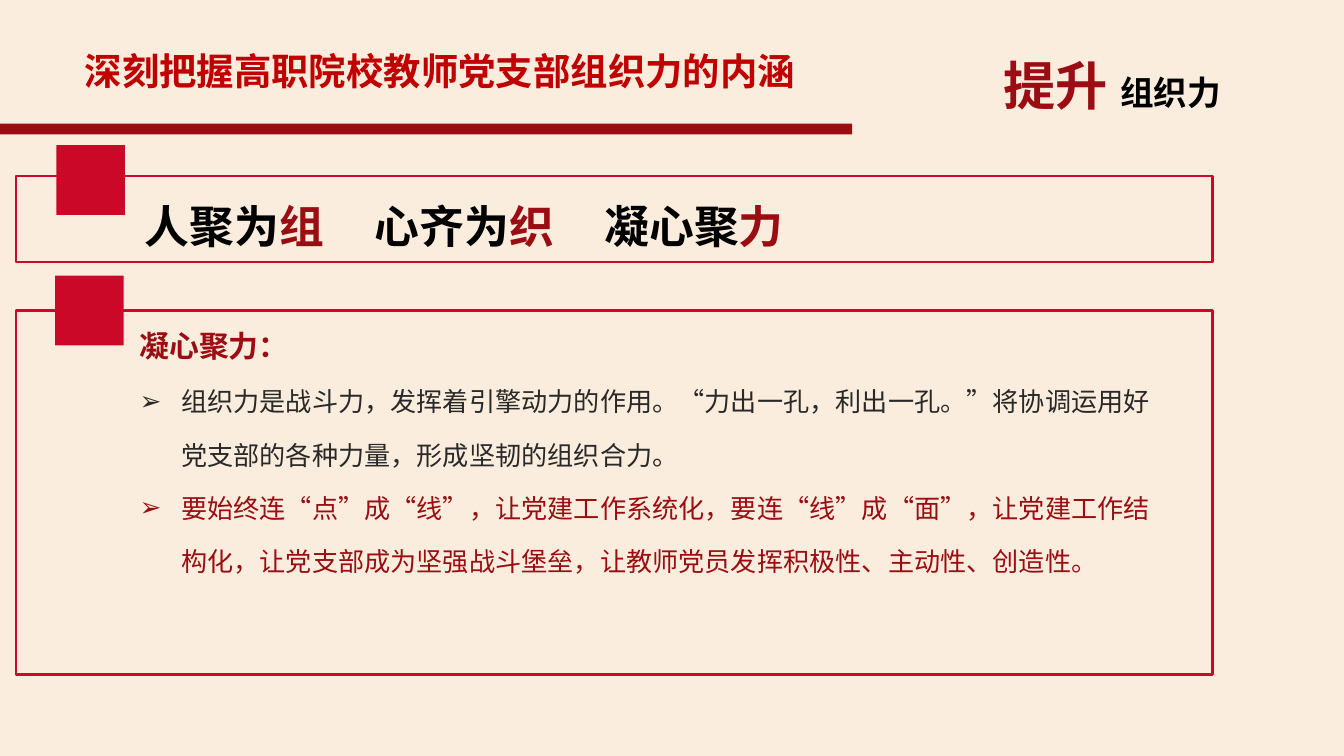
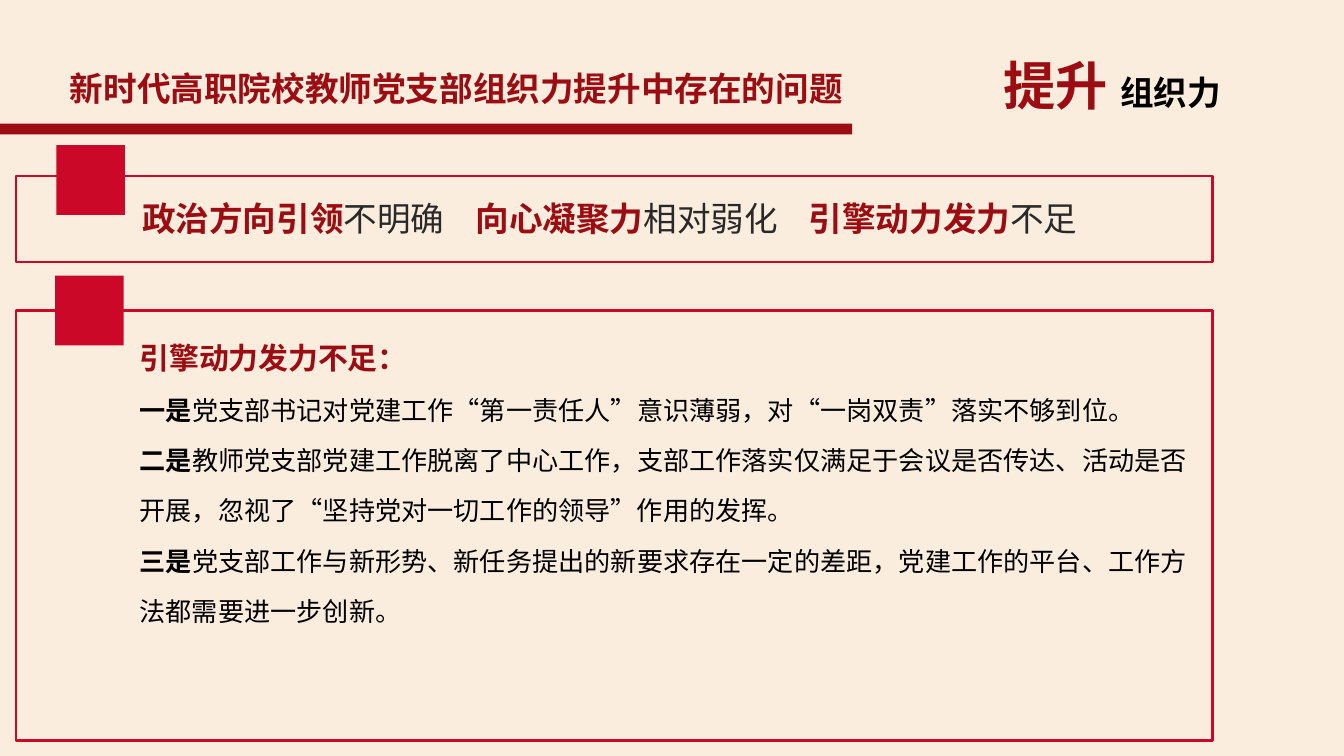
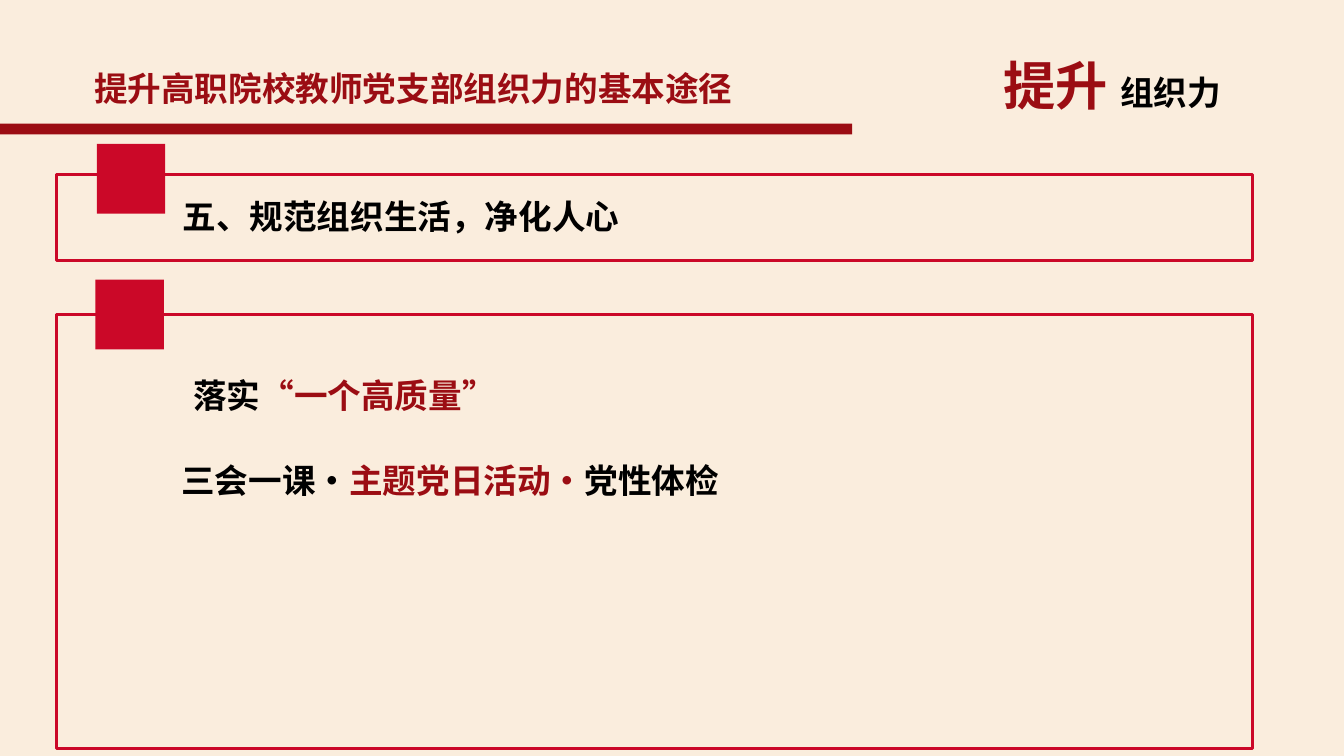
from lxml.etree import SubElement
from pptx import Presentation
from pptx.dml.color import RGBColor
from pptx.enum.lang import MSO_LANGUAGE_ID
from pptx.enum.shapes import MSO_SHAPE
from pptx.enum.text import MSO_ANCHOR, MSO_AUTO_SIZE, PP_ALIGN
from pptx.oxml.ns import qn
from pptx.util import Inches, Pt

COLORS = {
    "paper": "FAEDDD",
    "dark_red": "9B0D13",
    "title_red": "C00000",
    "red": "CB0828",
    "ink": "292929",
    "black": "000000",
}
FONT, TITLE_FONT = "Noto Sans CJK SC", "Arial Narrow"
PANEL_W, HEADLINE_H = 8.9, 0.64
MARKER_W, MARKER_H = 0.51, 0.52


def rgb(name):
    return RGBColor.from_string(COLORS[name])


def add_run(p, text, size=18, color="black", bold=False, font=FONT):
    r = p.add_run()
    r.text = text
    r.font.size, r.font.bold, r.font.name = Pt(size), bold, font
    r.font.color.rgb = rgb(color)
    r.font.language_id = MSO_LANGUAGE_ID.SIMPLIFIED_CHINESE
    SubElement(r.font._element, qn("a:ea"), typeface=FONT)


def add_bullet(p, char, indent):
    pPr = p._p.get_or_add_pPr()
    pPr.set("marL", str(Inches(indent)))
    pPr.set("indent", str(-Inches(indent)))
    SubElement(pPr, qn("a:buFont"), typeface="Arial")
    SubElement(pPr, qn("a:buChar"), char=char)


def add_tabs(p, step, count=2):
    tabs = SubElement(p._p.get_or_add_pPr(), qn("a:tabLst"))
    for i in range(1, count + 1):
        SubElement(tabs, qn("a:tab"), pos=str(Inches(step * i)), algn="l")


def write(tf, *paras, spacing=1.0, tab_step=None, **fmt):
    """Each paragraph is a dict with runs [(text, format)] and its own settings."""
    tf.word_wrap = True
    for i, para in enumerate(paras):
        p = tf.paragraphs[0] if i == 0 else tf.add_paragraph()
        p.alignment = PP_ALIGN.LEFT
        p.line_spacing = para.get("spacing", spacing)
        p.space_before = Pt(0)
        if "bullet" in para:
            add_bullet(p, para["bullet"], 0.31)
        if "indent" in para:
            p._p.get_or_add_pPr().set("marL", str(Inches(para["indent"])))
        if tab_step:
            add_tabs(p, tab_step)
        for text, run_fmt in para["runs"]:
            add_run(p, text, **{**fmt, **run_fmt})


def para(*runs, **settings):
    return {"runs": runs, **settings}


def add_box(shapes, x, y, w, h, fill=None, line=None):
    sp = shapes.add_shape(MSO_SHAPE.RECTANGLE, Inches(x), Inches(y), Inches(w), Inches(h))
    sp.shadow.inherit = False
    if fill:
        sp.fill.solid()
        sp.fill.fore_color.rgb = rgb(fill)
    else:
        sp.fill.background()
    if line:
        sp.line.color.rgb = rgb(line)
        sp.line.width = Pt(1.5)
    else:
        sp.line.fill.background()
    return sp


def add_text(shapes, x, y, w, h, *paras, **fmt):
    sp = shapes.add_textbox(Inches(x), Inches(y), Inches(w), Inches(h))
    write(sp.text_frame, *paras, **fmt)
    return sp


def dress_layout(layout, s):
    """Give the layout its background, title band and corner label."""
    layout.background.fill.solid()
    layout.background.fill.fore_color.rgb = rgb("paper")
    for ph in list(layout.placeholders)[1:]:
        ph.element.getparent().remove(ph.element)
    label = add_text(s.shapes, 7.37, 0.35, 2.61, 0.57, para(
        ("提升 ", {"size": 28, "color": "dark_red"}), ("组织力", {})), bold=True)
    band = add_box(s.shapes, 0, 0.92, 6.34, 0.08, fill="dark_red")
    for sp in (label, band):
        layout.shapes.element.append(sp.element)


def add_title(s, text, x, y, w, size=18, color="dark_red"):
    sp = s.shapes.title
    sp.left, sp.top, sp.width, sp.height = map(Inches, (x, y, w, 0.63))
    tf = sp.text_frame
    tf.auto_size = MSO_AUTO_SIZE.NONE
    tf.vertical_anchor = MSO_ANCHOR.MIDDLE
    write(tf, para((text, {})), size=size, color=color, bold=True, font=TITLE_FONT)


def add_panel(s, x, y, h, marker, text_box, *paras, **fmt):
    """Outlined panel; marker and text_box are offsets from its top left corner."""
    shapes = s.shapes.add_group_shape().shapes
    add_box(shapes, x, y, PANEL_W, h, line="red")
    add_box(shapes, x + marker[0], y + marker[1], MARKER_W, MARKER_H, fill="red")
    dx, dy, w, text_h = text_box
    add_text(shapes, x + dx, y + dy, w, text_h, *paras, **fmt)


def add_headline(s, x, y, text_box, *runs, **fmt):
    add_panel(s, x, y, HEADLINE_H, (0.3, -0.23), text_box, para(*runs), spacing=1.3, **fmt)


def add_body(s, x, y, h, text_box, *paras, **fmt):
    add_panel(s, x, y, h, (0.29, -0.26), text_box, *paras, **fmt)


RED = {"color": "dark_red"}
RED_BOLD = {"color": "dark_red", "bold": True}
BOLD = {"bold": True}
HEADING = {"size": 16, **RED_BOLD}


def meaning_slide(s):
    add_title(s, "深刻把握高职院校教师党支部组织力的内涵", 0.53, 0.21, 5.53,
              size=20, color="title_red")
    add_headline(s, 0.12, 1.31, (0.86, 0, 6.46, 1.15),
                 ("人聚为", {}), ("组\t", RED), ("心齐为", {}), ("织\t", RED),
                 ("凝心聚", {}), ("力", RED), size=24, bold=True, tab_step=1.71)
    add_body(
        s, 0.12, 2.31, 2.71, (0.82, 0, 7.83, 2.05),
        para(("凝心聚力：", HEADING), spacing=1.3),
        para(("组织力是战斗力，发挥着引擎动力的作用。“力出一孔，利出一孔。”将协调运用好"
              "党支部的各种力量，形成坚韧的组织合力。", {"color": "ink"}), bullet="➢"),
        para(("要始终连“点”成“线”，让党建工作系统化，要连“线”成“面”，让党建工作结构化，"
              "让党支部成为坚强战斗堡垒，让教师党员发挥积极性、主动性、创造性。", RED), bullet="➢"),
        spacing=1.7, size=14)


def problems_slide(s):
    add_title(s, "新时代高职院校教师党支部组织力提升中存在的问题", 0.42, 0.34, 6.15)
    add_headline(s, 0.12, 1.31, (0.84, 0.02, 7.67, 0.49),
                 ("政治方向引领", RED_BOLD), ("不明确\t", {}),
                 ("向心凝聚力", RED_BOLD), ("相对弱化\t", {}),
                 ("引擎动力发力", RED_BOLD), ("不足", {}), color="ink", tab_step=2.48)
    problems = [
        ("一是", "党支部书记对党建工作“第一责任人”意识薄弱，对“一岗双责”落实不够到位。"),
        ("二是", "教师党支部党建工作脱离了中心工作，支部工作落实仅满足于会议是否传达、"
                 "活动是否开展，忽视了“坚持党对一切工作的领导”作用的发挥。"),
        ("三是", "党支部工作与新形势、新任务提出的新要求存在一定的差距，党建工作的平台、"
                 "工作方法都需要进一步创新。"),
    ]
    add_body(s, 0.12, 2.31, 3.2, (0.82, 0.01, 8.08, 2.41),
             para(("引擎动力发力不足：", HEADING)),
             *[para((lead, BOLD), (text, {})) for lead, text in problems],
             spacing=1.6, size=14)


def approach_slide(s):
    add_title(s, "提升高职院校教师党支部组织力的基本途径", 0.6, 0.34, 5.01)
    add_headline(s, 0.42, 1.3, (0.84, 0.02, 6.52, 0.49),
                 ("五、规范组织生活，净化人心", {}), bold=True)
    add_body(s, 0.42, 2.34, 3.23, (0.83, 0.07, 7.49, 2.47),
             para(("落实", {}), ("“一个高质量”", RED), indent=0.09),
             para(("三会一课·", {}), ("主题党日活动·", RED), ("党性体检", {})),
             spacing=2.1, bold=True)


def main():
    prs = Presentation()
    prs.slide_width = Inches(10)
    prs.slide_height = prs.slide_width * 9 // 16
    layout = prs.slide_layouts.get_by_name("Title Only")
    for i, build in enumerate((meaning_slide, problems_slide, approach_slide)):
        s = prs.slides.add_slide(layout)
        if i == 0:
            dress_layout(layout, s)
        build(s)
    prs.save("out.pptx")


if __name__ == "__main__":
    main()
